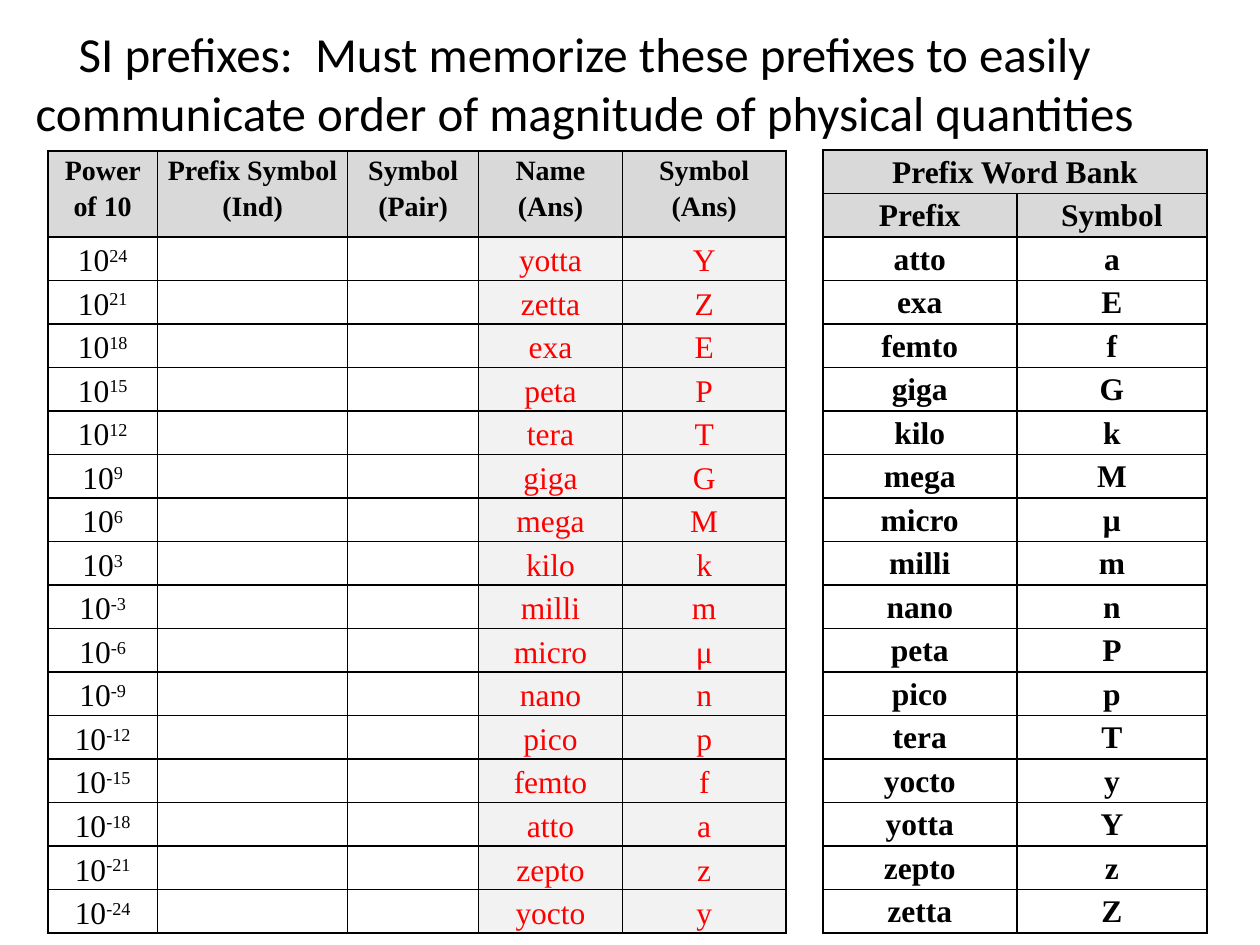
"""Build a slide with an SI prefix exercise table and its word bank."""
import lxml.etree
import pptx
import pptx.dml.color
import pptx.enum.text
import pptx.oxml.ns
import pptx.util

Inches = pptx.util.Inches
Pt = pptx.util.Pt

COLORS = {"ink": "000000", "answer": "FF0000", "header": "D9D9D9", "answer_fill": "F2F2F2"}
TITLE = ("SI prefixes:  Must memorize these prefixes to easily "
         "communicate order of magnitude of physical quantities")
HEADINGS = ["Power of 10", "Prefix Symbol (Ind)", "Symbol (Pair)", "Name (Ans)", "Symbol (Ans)"]
PREFIXES = [
    ("24", "yotta", "Y"), ("21", "zetta", "Z"), ("18", "exa", "E"), ("15", "peta", "P"),
    ("12", "tera", "T"), ("9", "giga", "G"), ("6", "mega", "M"), ("3", "kilo", "k"),
    ("-3", "milli", "m"), ("-6", "micro", "μ"), ("-9", "nano", "n"), ("-12", "pico", "p"),
    ("-15", "femto", "f"), ("-18", "atto", "a"), ("-21", "zepto", "z"), ("-24", "yocto", "y"),
]


def rgb(name):
    return pptx.dml.color.RGBColor.from_string(COLORS[name])


def style_paragraph(paragraph, size, face, color="ink", bold=False):
    paragraph.alignment = pptx.enum.text.PP_ALIGN.CENTER
    font = paragraph.font
    font.size = Pt(size)
    font.name = face
    font.bold = bold
    font.color.rgb = rgb(color)


def add_title(slide):
    title = slide.shapes.add_textbox(Inches(0.14), Inches(0.15), Inches(9), Inches(1.01))
    frame = title.text_frame
    frame.word_wrap = True
    frame.vertical_anchor = pptx.enum.text.MSO_ANCHOR.MIDDLE
    frame.text = TITLE
    style_paragraph(frame.paragraphs[0], 28, "Calibri")


def add_borders(cell):
    properties = cell._tc.get_or_add_tcPr()
    qn = pptx.oxml.ns.qn
    for position, side in enumerate(("lnL", "lnR", "lnT", "lnB")):
        line = lxml.etree.Element(qn(f"a:{side}"), w=str(Pt(1)))
        fill = lxml.etree.SubElement(line, qn("a:solidFill"))
        lxml.etree.SubElement(fill, qn("a:srgbClr"), val=COLORS["ink"])
        properties.insert(position, line)


def add_grid(slide, left, top, widths, heights):
    frame = slide.shapes.add_table(len(heights), len(widths), Inches(left), Inches(top),
                                   Inches(sum(widths)), Inches(sum(heights)))
    table = frame.table
    table.first_row = False
    table.horz_banding = False
    for column, width in zip(table.columns, widths):
        column.width = Inches(width)
    for row, height in zip(table.rows, heights):
        row.height = Inches(height)
    return table


def fill_cell(cell, text="", size=18, color="ink", bold=False, fill=None, middle=False, exponent=""):
    cell.margin_left = cell.margin_right = Inches(0.07)
    cell.margin_top = cell.margin_bottom = 0
    if middle:
        cell.vertical_anchor = pptx.enum.text.MSO_ANCHOR.MIDDLE
    if fill:
        cell.fill.solid()
        cell.fill.fore_color.rgb = rgb(fill)
    else:
        cell.fill.background()
    add_borders(cell)
    paragraph = cell.text_frame.paragraphs[0]
    paragraph.line_spacing = 1.15
    style_paragraph(paragraph, size, "Times New Roman", color, bold)
    if text:
        paragraph.add_run().text = text
    if exponent:
        power = paragraph.add_run()
        power.text = exponent
        power._r.get_or_add_rPr().set("baseline", "30000")


def add_exercise(slide):
    header_height = 0.68
    row_height = (6.04 - header_height) / len(PREFIXES)
    table = add_grid(slide, 0.38, 1.2, [0.87, 1.51, 1.04, 1.14, 1.3],
                     [header_height] + [row_height] * len(PREFIXES))
    for column, heading in enumerate(HEADINGS):
        fill_cell(table.cell(0, column), heading, size=16, bold=True, fill="header")
    for row, (exponent, name, symbol) in enumerate(PREFIXES, 1):
        fill_cell(table.cell(row, 0), "10", middle=True, exponent=exponent)
        for column in (1, 2):
            fill_cell(table.cell(row, column))
        for column, answer in ((3, name), (4, symbol)):
            fill_cell(table.cell(row, column), answer, color="answer",
                      fill="answer_fill", middle=True)


def add_word_bank(slide):
    entries = sorted((name, symbol) for _, name, symbol in PREFIXES)
    rows = [("Prefix Word Bank", ""), ("Prefix", "Symbol")] + entries
    table = add_grid(slide, 6.53, 1.19, [1.54, 1.51], [6.05 / len(rows)] * len(rows))
    table.cell(0, 0).merge(table.cell(0, 1))
    for row, words in enumerate(rows):
        for column, word in enumerate(words):
            fill_cell(table.cell(row, column), word, bold=True, fill="header" if row < 2 else None)


def main():
    presentation = pptx.Presentation()
    presentation.slide_width = Inches(10)
    presentation.slide_height = Inches(7.5)
    slide = presentation.slides.add_slide(presentation.slide_layouts[6])
    add_title(slide)
    add_exercise(slide)
    add_word_bank(slide)
    presentation.save("out.pptx")


if __name__ == "__main__":
    main()
